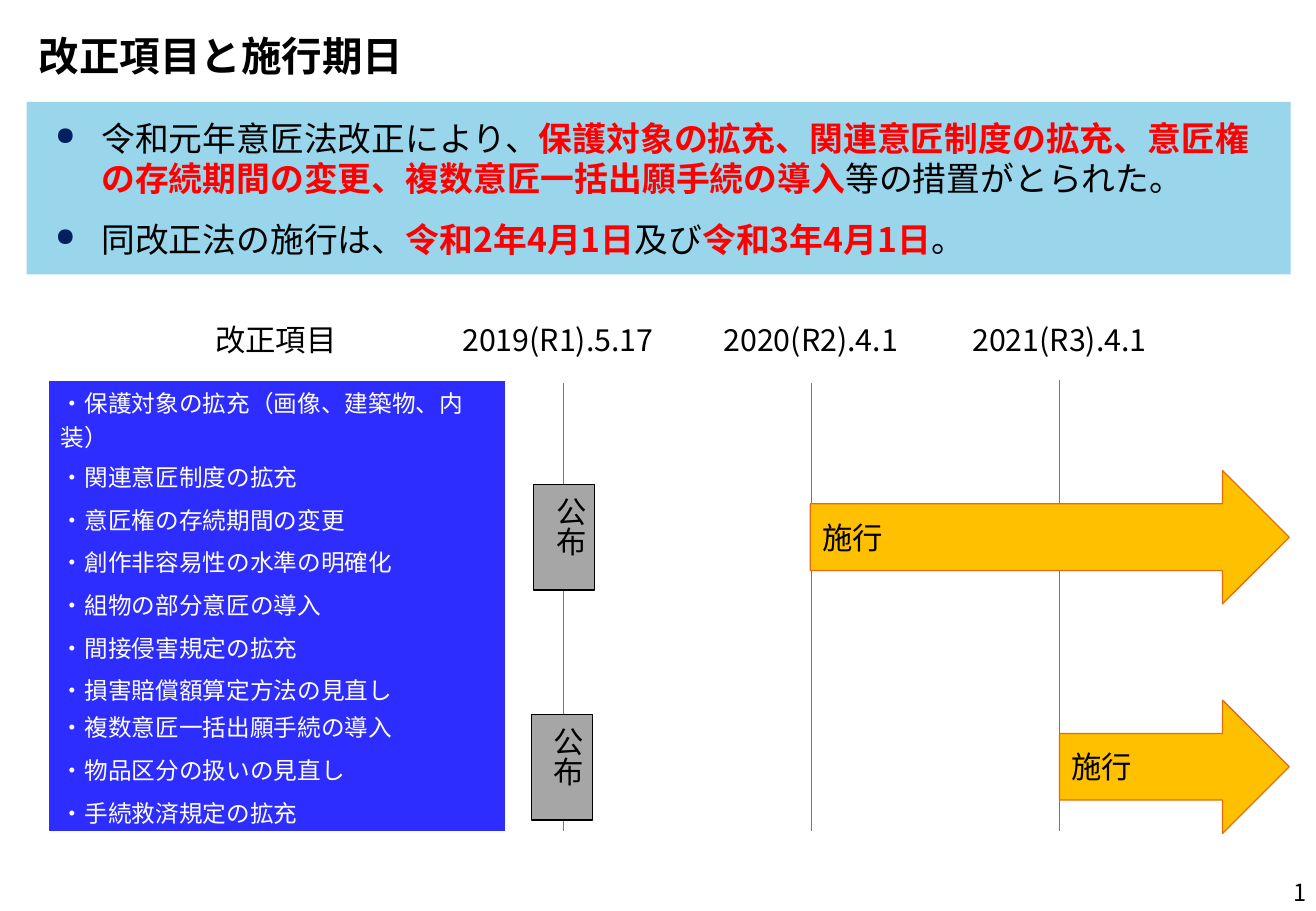
from lxml import etree
from pptx import Presentation
from pptx import util as u
from pptx.dml.color import RGBColor
from pptx.enum import shapes, text
from pptx.oxml import ns

FONT = "Noto Sans CJK JP"
NO_STYLE = "{2D5ABB26-0587-4C30-8999-92F81FD0307C}"
BLACK, RED, WHITE = "000000", "FF0000", "FFFFFF"
EDGE, LABEL_TOP, LINE_END = 26.95, 6.6, 17.37
ROW, TALL_ROW = 0.89, 1.52

MEASURES = [
    [("令和元年意匠法改正により、", False),
     ("保護対象の拡充、関連意匠制度の拡充、意匠権の存続期間の変更、複数意匠一括出願手続の導入", True),
     ("等の措置がとられた。", False)],
    [("同改正法の施行は、", False), ("令和2年4月1日", True), ("及び", False),
     ("令和3年4月1日", True), ("。", False)],
]
ITEMS_2020 = ["保護対象の拡充（画像、建築物、内装）", "関連意匠制度の拡充", "意匠権の存続期間の変更",
              "創作非容易性の水準の明確化", "組物の部分意匠の導入", "間接侵害規定の拡充",
              "損害賠償額算定方法の見直し"]
ITEMS_2021 = ["複数意匠一括出願手続の導入", "物品区分の扱いの見直し", "手続救済規定の拡充"]


def rgb(value):
    """Turn a hex string into a colour."""
    return RGBColor.from_string(value)


def box(left, top, width, height):
    """Turn centimetres into a position and a size."""
    return [u.Cm(value) for value in (left, top, width, height)]


def write(paragraph, words, size=18, color=BLACK, bold=False, align=text.PP_ALIGN.LEFT):
    """Add a formatted run to a paragraph."""
    paragraph.alignment = align
    run = paragraph.add_run()
    run.text = words
    run.font.name, run.font.size, run.font.bold = FONT, u.Pt(size), bold
    run.font.color.rgb = rgb(color)
    etree.SubElement(run.font._element, ns.qn("a:ea"), typeface=FONT)


def add_label(slide, words, left, top, width, height=1.02, wrap=False, **style):
    """Add a line of free text."""
    frame = slide.shapes.add_textbox(*box(left, top, width, height)).text_frame
    frame.word_wrap = wrap
    write(frame.paragraphs[0], words, **style)
    return frame


def add_block(slide, preset, place, fill, outline=None):
    """Add a filled shape and return it."""
    block = slide.shapes.add_shape(preset, *box(*place))
    block.shadow.inherit = False
    block.fill.solid()
    block.fill.fore_color.rgb = rgb(fill)
    if outline:
        block.line.color.rgb = rgb(outline)
        block.line.width = u.Pt(0.75)
    else:
        block.line.fill.background()
    return block


def add_bullet(paragraph):
    """Give a paragraph a round bullet with a hanging indent."""
    properties = paragraph._p.get_or_add_pPr()
    properties.set("marL", str(u.Cm(0.96)))
    properties.set("indent", str(-u.Cm(0.96)))
    color = etree.SubElement(properties, ns.qn("a:buClr"))
    etree.SubElement(color, ns.qn("a:srgbClr"), val="002060")
    etree.SubElement(properties, ns.qn("a:buSzPct"), val="75000")
    etree.SubElement(properties, ns.qn("a:buChar"), char="●")


def add_summary(slide):
    """Add the panel that sums up the revision."""
    panel = add_block(slide, shapes.MSO_SHAPE.RECTANGLE, (0.56, 2.13, 26.42, 3.61), "99D6EC")
    frame = panel.text_frame
    frame.word_wrap = True
    frame.vertical_anchor = text.MSO_ANCHOR.MIDDLE
    frame.margin_left = frame.margin_right = u.Cm(0.6)
    frame.margin_top = frame.margin_bottom = u.Cm(0.3)
    for index, measure in enumerate(MEASURES):
        paragraph = frame.add_paragraph() if index else frame.paragraphs[0]
        paragraph.space_before = paragraph.space_after = u.Pt(6)
        add_bullet(paragraph)
        for words, key in measure:
            write(paragraph, words, size=20, color=RED if key else BLACK, bold=key)


def add_items(slide, items, top, first_row=ROW):
    """Add a one-column table of revised items."""
    place = box(1.02, top, 9.53, ROW * len(items))
    table = slide.shapes.add_table(len(items), 1, *place).table
    table.first_row = table.horz_banding = False
    table._tbl.tblPr.find(ns.qn("a:tableStyleId")).text = NO_STYLE
    table.rows[0].height = u.Cm(first_row)
    for row, item in zip(table.rows, items):
        cell = row.cells[0]
        cell.fill.solid()
        cell.fill.fore_color.rgb = rgb("2D2DFF")
        cell.vertical_anchor = text.MSO_ANCHOR.MIDDLE
        cell.margin_top, cell.margin_bottom = u.Cm(0.08), 0
        write(cell.text_frame.paragraphs[0], "・" + item, size=14, color=WHITE)


def add_date(slide, date, center, label_left, label_width, line_top):
    """Add a date and its vertical line."""
    add_label(slide, date, label_left, LABEL_TOP, label_width, align=text.PP_ALIGN.CENTER)
    line = slide.shapes.add_connector(shapes.MSO_CONNECTOR.STRAIGHT, u.Cm(center),
                                      u.Cm(line_top), u.Cm(center), u.Cm(LINE_END))
    line.line.color.rgb = rgb("4B7EBC")
    line.line.width = u.Pt(0.75)
    etree.SubElement(line._element.spPr, ns.qn("a:effectLst"))


def add_enforcement(slide, left, top):
    """Add an arrow from the date of enforcement to the right edge."""
    arrow = add_block(slide, shapes.MSO_SHAPE.RIGHT_ARROW,
                      (left, top, EDGE - left, 2.79), "FFC000", "E46C0A")
    arrow.text_frame.word_wrap = False
    arrow.text_frame.vertical_anchor = text.MSO_ANCHOR.MIDDLE
    write(arrow.text_frame.paragraphs[0], "施行")


def add_promulgation(slide, left, top):
    """Add a promulgation box with vertical text."""
    notice = add_block(slide, shapes.MSO_SHAPE.RECTANGLE, (left, top, 1.27, 2.21), "A6A6A6", BLACK)
    notice.text_frame.vertical_anchor = text.MSO_ANCHOR.TOP
    notice.text_frame._txBody.bodyPr.set("vert", "eaVert")
    write(notice.text_frame.paragraphs[0], "公布", align=text.PP_ALIGN.CENTER)


def main():
    """Build the slide and save it."""
    deck = Presentation()
    deck.slide_width, deck.slide_height = u.Cm(27.51), u.Cm(19.05)
    slide = deck.slides.add_slide(deck.slide_layouts[5])
    title = slide.shapes.title
    title.left, title.top, title.width, title.height = box(0.56, 0.53, 26.42, 1.27)
    title.text_frame.auto_size = text.MSO_AUTO_SIZE.NONE
    title.text_frame.vertical_anchor = text.MSO_ANCHOR.MIDDLE
    write(title.text_frame.paragraphs[0], "改正項目と施行期日", size=24, bold=True)

    add_summary(slide)
    add_label(slide, "改正項目", 4.25, LABEL_TOP, 3.07)
    add_date(slide, "2019(R1).5.17", 11.78, 9.1, 5.13, 8)
    add_date(slide, "2020(R2).4.1", 16.96, 14.59, 4.72, 8)
    add_date(slide, "2021(R3).4.1", 22.15, 19.79, 4.72, 7.95)
    add_enforcement(slide, 16.94, 9.84)
    add_enforcement(slide, 22.15, 14.64)
    add_items(slide, ITEMS_2020, 7.96, first_row=TALL_ROW)
    add_items(slide, ITEMS_2021, 14.71)
    add_promulgation(slide, 11.16, 10.13)
    add_promulgation(slide, 11.11, 14.94)
    number = add_label(slide, "1", 21.13, 18.14, 6.43, wrap=True, size=14,
                       align=text.PP_ALIGN.RIGHT)
    number.vertical_anchor = text.MSO_ANCHOR.MIDDLE
    deck.save("out.pptx")


if __name__ == "__main__":
    main()
